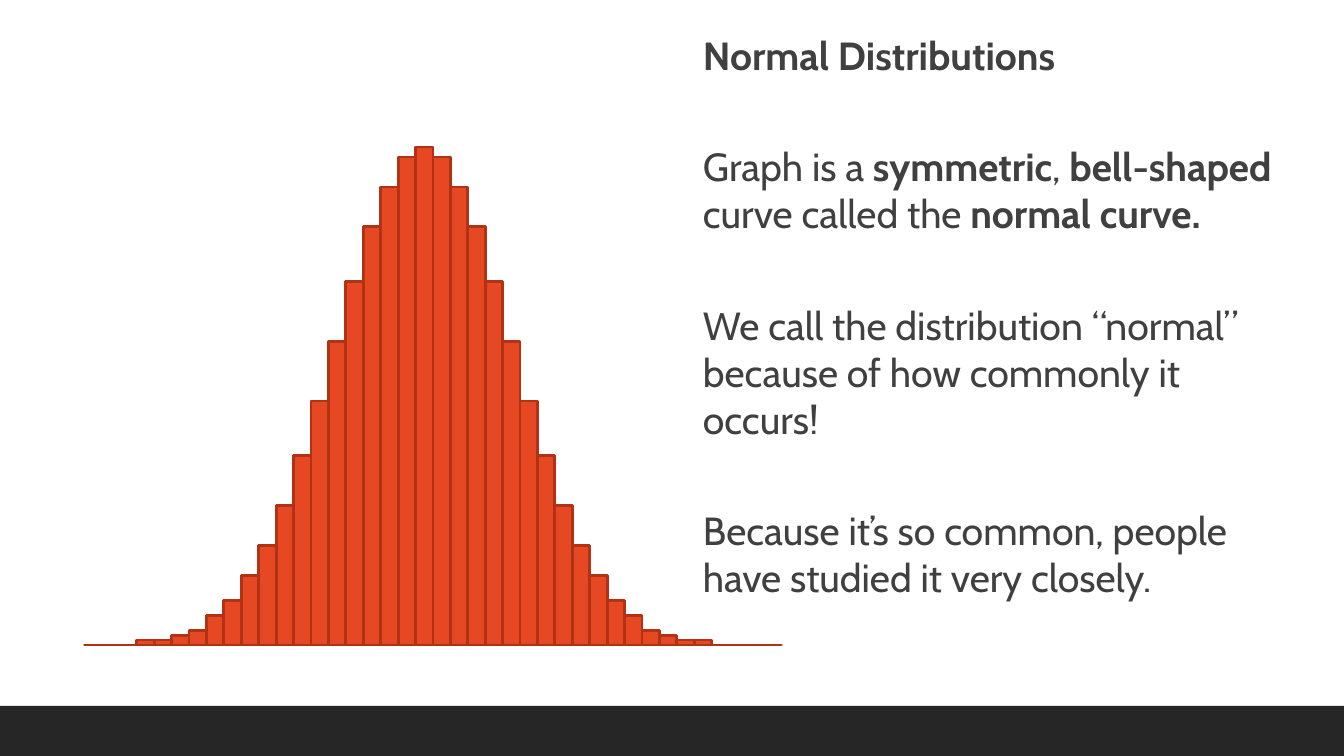
"""Build the slide on normal distributions."""
from dataclasses import dataclass

from lxml import etree
from pptx import Presentation
from pptx import util as u
from pptx.chart.data import CategoryChartData
from pptx.dml.color import RGBColor
from pptx.enum import chart as ch, shapes, text
from pptx.oxml import ns

EMU_PER_PX = 63500 / 7
FONT = "Cabin"
COLORS = {"bar": "E64823", "outline": "B23214", "footer": "262626",
          "text": "404040", "axis": "000000"}
RISING = [0, 0, 0, 1, 1, 2, 3, 6, 9, 14, 20, 28, 38, 49, 61, 73, 84, 92, 98]
HEIGHTS = RISING + [100] + RISING[::-1] + [0]
PLOT = {"x": 0.02, "y": 0.13, "w": 0.96, "h": 0.85}


@dataclass(frozen=True)
class Run:
    text: str
    bold: bool = False


PARAGRAPHS = [
    [Run("Normal Distributions", True)],
    [Run("Graph is a "), Run("symmetric", True), Run(", "),
     Run("bell-shaped", True), Run(" curve called the "),
     Run("normal curve.", True)],
    [Run("We call the distribution “normal” because of how commonly it occurs!")],
    [Run("Because it’s so common, people have studied it very closely.")],
]


def px(n: int) -> u.Emu:
    return u.Emu(round(n * EMU_PER_PX))


def box(*lengths: int) -> list[u.Emu]:
    return [px(n) for n in lengths]


def rgb(name: str) -> RGBColor:
    return RGBColor.from_string(COLORS[name])


def add_run(p, content: str, *, size: int = 28, bold: bool = False,
            color: str = "text") -> None:
    r = p.add_run()
    r.text = content
    r.font.name = FONT
    r.font.size = u.Pt(size)
    r.font.bold = bold
    r.font.color.rgb = rgb(color)


def add_footer(s) -> None:
    sp = s.shapes.add_shape(shapes.MSO_SHAPE.RECTANGLE, *box(0, 706, 1344, 50))
    sp.shadow.inherit = False
    sp.fill.solid()
    sp.fill.fore_color.rgb = rgb("footer")
    sp.line.fill.background()


def place_plot(chart) -> None:
    area = chart._chartSpace.chart.plotArea
    for old in area.findall(ns.qn("c:layout")):
        area.remove(old)
    layout = etree.Element(ns.qn("c:layout"))
    manual = etree.SubElement(layout, ns.qn("c:manualLayout"))
    settings = {"layoutTarget": "inner", "xMode": "edge", "yMode": "edge", **PLOT}
    for tag, val in settings.items():
        etree.SubElement(manual, ns.qn(f"c:{tag}")).set("val", str(val))
    area.insert(0, layout)


def add_histogram(s) -> None:
    data = CategoryChartData()
    data.categories = [str(i) for i in range(1, len(HEIGHTS) + 1)]
    data.add_series("Series 1", HEIGHTS)
    chart = s.shapes.add_chart(ch.XL_CHART_TYPE.COLUMN_CLUSTERED,
                               *box(70, 71, 726, 586), data).chart
    chart.has_legend = False
    chart.has_title = False
    chart.font.name = FONT
    chart.font.size = u.Pt(10)
    chart.font.color.rgb = rgb("axis")
    for axis in (chart.category_axis, chart.value_axis):
        axis.has_major_gridlines = False
        axis.visible = False
    chart.value_axis.minimum_scale = 0
    chart.value_axis.maximum_scale = 100
    plot = chart.plots[0]
    plot.gap_width = 0
    plot.overlap = -27
    plot.vary_by_categories = False
    bars = plot.series[0]
    bars.invert_if_negative = False
    bars.format.fill.solid()
    bars.format.fill.fore_color.rgb = rgb("bar")
    bars.format.line.color.rgb = rgb("outline")
    bars.format.line.width = u.Pt(2)
    place_plot(chart)


def add_explanation(s) -> None:
    tf = s.shapes.add_textbox(*box(703, 26, 585, 611)).text_frame
    tf.word_wrap = True
    tf.vertical_anchor = text.MSO_ANCHOR.TOP
    tf.margin_left = tf.margin_right = 0
    tf.margin_top = tf.margin_bottom = px(5)
    for i, runs in enumerate(PARAGRAPHS):
        p = tf.add_paragraph() if i else tf.paragraphs[0]
        p.space_after = u.Pt(46)
        for run in runs:
            add_run(p, run.text, bold=run.bold)


def main() -> None:
    prs = Presentation()
    prs.slide_width, prs.slide_height = box(1344, 756)
    s = prs.slides.add_slide(prs.slide_layouts[6])
    add_footer(s)
    add_histogram(s)
    add_explanation(s)
    prs.save("out.pptx")


if __name__ == "__main__":
    main()
